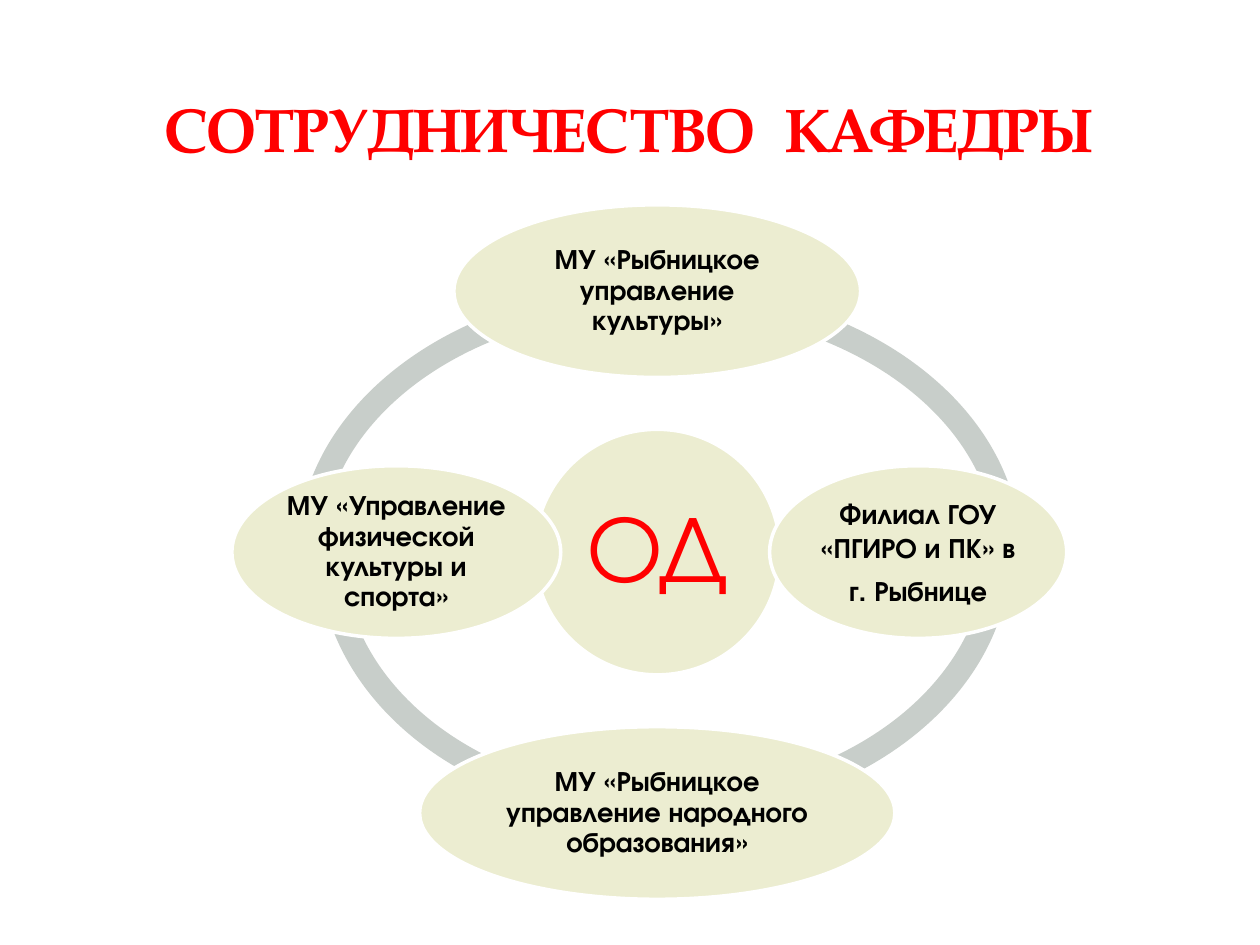
from pptx import Presentation
from pptx.dml.color import RGBColor
from pptx.enum.shapes import MSO_SHAPE
from pptx.enum.text import MSO_ANCHOR, PP_ALIGN
from pptx.util import Cm, Pt

COLORS = {"red": "FF0000", "black": "000000", "white": "FFFFFF",
          "ring": "C8CECA", "bubble": "ECEDD1"}
HEAD, BODY = "TeX Gyre Pagella", "TeX Gyre Adventor"
CX, CY = 13.25, 11.13
RADIUS = 5.26
ARC_H = 10.77


def rgb(name):
    return RGBColor.from_string(COLORS[name])


class Deck:
    def __init__(self):
        self.prs = Presentation()
        self.prs.slide_width, self.prs.slide_height = Cm(25.4), Cm(19.05)
        self.s = self.prs.slides.add_slide(self.prs.slide_layouts[6])

    def frame(self, sp, inset):
        tf = sp.text_frame
        tf.word_wrap = True
        tf.vertical_anchor = MSO_ANCHOR.MIDDLE
        tf.margin_left = tf.margin_right = Cm(inset)
        tf.margin_top = tf.margin_bottom = Cm(inset)
        return tf

    def run(self, p, text, font, size, color, bold):
        p.alignment = PP_ALIGN.CENTER
        r = p.add_run()
        r.text = text
        r.font.name, r.font.size, r.font.bold = font, Pt(size), bold
        r.font.color.rgb = rgb(color)
        return r

    def title(self, words, x, y, w, h):
        sp = self.s.shapes.add_textbox(Cm(x), Cm(y), Cm(w), Cm(h))
        p = self.frame(sp, 0.13).paragraphs[0]
        first, last = words
        self.run(p, first, HEAD, 35, "red", True)
        gap = self.run(p, " ", HEAD, 35, "red", True)
        gap.font._element.set("spc", "900")
        self.run(p, last, HEAD, 35, "red", True)

    def shape(self, kind, cx, cy, w, h, fill):
        sp = self.s.shapes.add_shape(kind, Cm(cx - w / 2), Cm(cy - h / 2), Cm(w), Cm(h))
        sp.shadow.inherit = False
        sp.fill.solid()
        sp.fill.fore_color.rgb = rgb(fill)
        return sp

    def arc(self, w, start, end):
        sp = self.shape(MSO_SHAPE.BLOCK_ARC, CX, CY, w, ARC_H, "ring")
        sp.line.fill.background()
        for i, value in enumerate((start, end, 0.046)):
            sp.adjustments[i] = value

    def bubble(self, cx, cy, w, h, lines, size=16, color="black", bold=True,
               spacing=0.9, inset=0.05):
        sp = self.shape(MSO_SHAPE.OVAL, cx, cy, w, h, "bubble")
        sp.line.color.rgb = rgb("white")
        sp.line.width = Pt(2)
        tf = self.frame(sp, inset)
        for i, line in enumerate(lines):
            p = tf.add_paragraph() if i else tf.paragraphs[0]
            p.line_spacing = spacing
            p.space_after = Pt(size * 0.35)
            self.run(p, line, BODY, size, color, bold)


def main():
    d = Deck()
    d.title(("СОТРУДНИЧЕСТВО", "КАФЕДРЫ"), 1.19, 1.14, 22.94, 2.9)
    for w, start, end in ((14.5, 108, 162), (13.67, 54, 108),
                          (14.25, 0, 54), (14.66, 162, 0)):
        d.arc(w, start, end)
    d.bubble(CX, CY, 4.95, 4.95, ["ОД"], 54, "red", False, inset=0.18)
    partners = (
        (0, -1, 8.2, 0.9, ["МУ «Рыбницкое управление культуры»"]),
        (1, 0, 5.99, 1.0, ["Филиал ГОУ «ПГИРО и ПК» в", "г. Рыбнице"]),
        (0, 1, 9.58, 0.9, ["МУ «Рыбницкое управление народного образования»"]),
        (-1, 0, 6.63, 0.9, ["МУ «Управление физической культуры и спорта»"]),
    )
    for dx, dy, w, spacing, lines in partners:
        d.bubble(CX + dx * RADIUS, CY + dy * RADIUS, w, 3.48, lines, spacing=spacing)
    d.prs.save("out.pptx")


if __name__ == "__main__":
    main()
